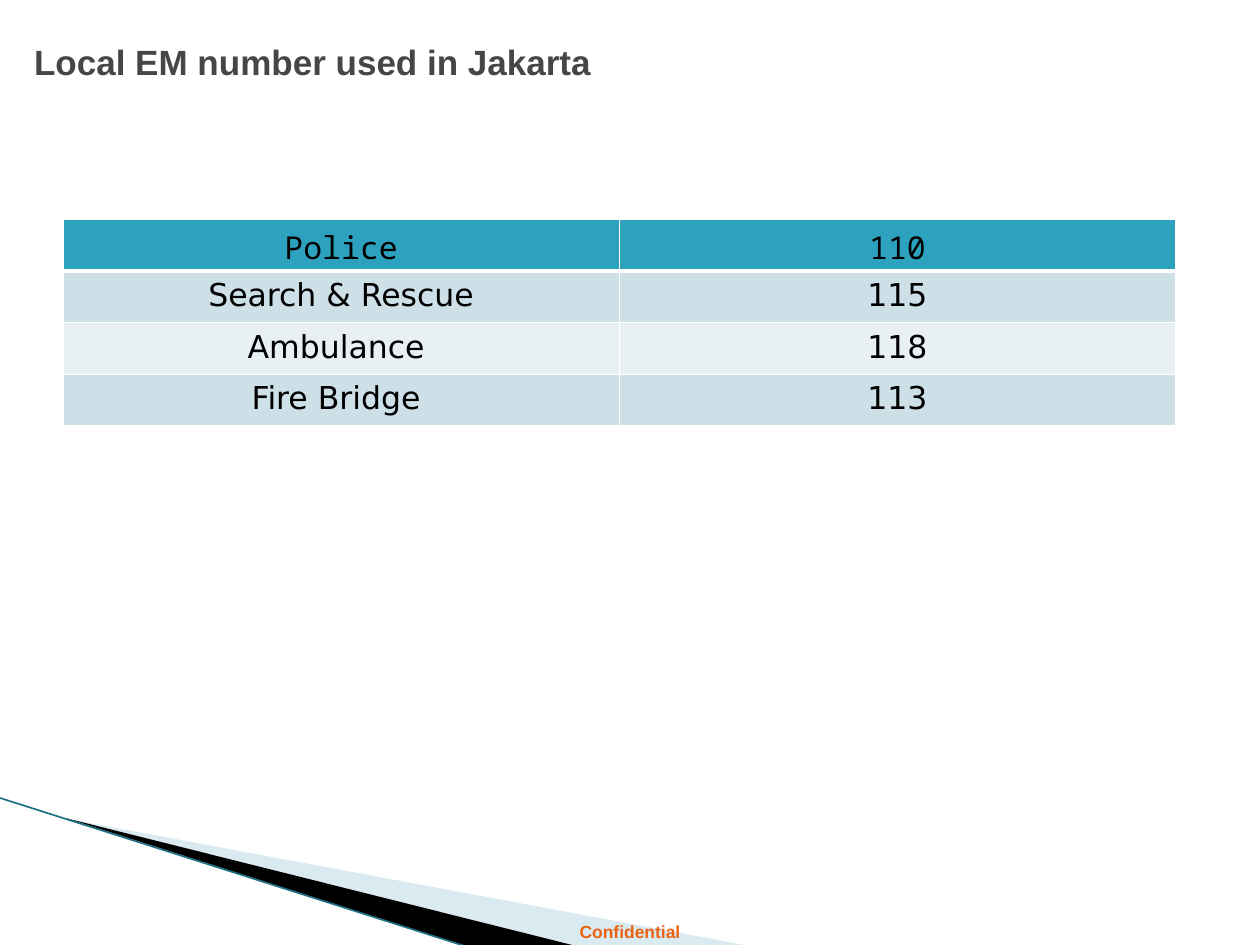
from lxml.etree import SubElement
from pptx import Presentation
from pptx.dml.color import RGBColor
from pptx.enum.shapes import MSO_CONNECTOR
from pptx.enum.text import MSO_ANCHOR, PP_ALIGN
from pptx.oxml import parse_xml
from pptx.oxml.ns import nsdecls, qn
from pptx.util import Inches, Pt

WIDTH, HEIGHT = 10, 7.5
ROW_HEIGHT = 5.48
ROWS = [
    ("Police", "110"),
    ("Search & Rescue", "115"),
    ("Ambulance ", "118"),
    ("Fire Bridge ", "113"),
]


def across(percent):
    return Inches(WIDTH * percent / 100)


def down(percent):
    return Inches(HEIGHT * percent / 100)


def color(value):
    return RGBColor.from_string(value)


def set_attributes(target, values):
    for name, value in values.items():
        setattr(target, name, value)


def write_text(text_frame, text, alignment, font_color, **font_values):
    paragraph = text_frame.paragraphs[0]
    paragraph.text = text
    paragraph.alignment = alignment
    for run in paragraph.runs:
        set_attributes(run.font, font_values)
        run.font.color.rgb = color(font_color)


def add_title(slide, text):
    title = slide.shapes.title
    set_attributes(title, {
        "left": across(1.7), "top": down(2.27),
        "width": across(90), "height": down(26.67),
    })
    set_attributes(title.text_frame, {
        "word_wrap": True, "vertical_anchor": MSO_ANCHOR.TOP, "margin_top": Inches(0.15),
    })
    write_text(title.text_frame, text, PP_ALIGN.LEFT, "464646",
               name="Arial", size=Pt(20), bold=True)


def add_wedge(slide, points, fill_color, opacity=100):
    corners = [(across(x), down(y)) for x, y in points]
    builder = slide.shapes.build_freeform(*corners[0], scale=1.0)
    builder.add_line_segments(corners[1:], close=True)
    shape = builder.convert_to_shape()
    shape.shadow.inherit = False
    shape.fill.solid()
    shape.fill.fore_color.rgb = color(fill_color)
    shape.line.fill.background()
    if opacity < 100:
        fill = shape.element.spPr.find(qn("a:solidFill"))
        SubElement(fill[0], qn("a:alpha"), val=str(opacity * 1000))


def add_edge(slide, start, end, line_color):
    connector = slide.shapes.add_connector(
        MSO_CONNECTOR.STRAIGHT,
        across(start[0]), down(start[1]), across(end[0]), down(end[1]))
    connector.line.color.rgb = color(line_color)
    connector.line.width = Pt(0.95)
    SubElement(connector.element.spPr, qn("a:effectLst"))


def add_footer(slide, text):
    box = slide.shapes.add_textbox(0, down(96.8), across(100), down(3.6))
    box.text_frame.word_wrap = True
    write_text(box.text_frame, text, PP_ALIGN.CENTER, "EB6312",
               name="Arial", size=Pt(10), bold=True)


def set_borders(cell, widths):
    properties = cell._tc.get_or_add_tcPr()
    for index, (side, width) in enumerate(widths.items()):
        properties.insert(index, parse_xml(
            f'<a:ln{side} {nsdecls("a")} w="{Pt(width)}"><a:solidFill>'
            f'<a:srgbClr val="FFFFFF"/></a:solidFill></a:ln{side}>'))


def add_number_table(slide, rows):
    table = slide.shapes.add_table(
        len(rows), 2, across(5), down(23.2),
        across(88.3), down(ROW_HEIGHT * len(rows))).table
    for row_index, row in enumerate(rows):
        header = row_index == 0
        fill_color = "2DA2BF" if header else ("E8F0F4", "CDE0E8")[row_index % 2]
        top = 3 if row_index == 1 else 1
        bottom = 3 if header else 1
        for column_index, text in enumerate(row):
            cell = table.cell(row_index, column_index)
            cell.fill.solid()
            cell.fill.fore_color.rgb = color(fill_color)
            set_borders(cell, {"L": 1, "R": 1, "T": top, "B": bottom})
            write_text(cell.text_frame, text, PP_ALIGN.CENTER, "000000",
                       name="Noto Sans Mono" if header else "DejaVu Sans",
                       size=Pt(18), bold=False)


def main():
    presentation = Presentation()
    set_attributes(presentation, {
        "slide_width": Inches(WIDTH), "slide_height": Inches(HEIGHT),
    })
    slide = presentation.slides.add_slide(presentation.slide_layouts[5])
    add_wedge(slide, [(5.5, 86.7), (59.5, 100.1), (45.6, 100.1)], "A0CBDC", 40)
    add_wedge(slide, [(5.3, 86.6), (45.7, 100.1), (37.2, 100.2)], "000000")
    add_edge(slide, (-0.1, 84.4), (37.1, 100.2), "1F6F85")
    add_footer(slide, "Confidential")
    add_title(slide, "Local EM number used in Jakarta")
    add_number_table(slide, ROWS)
    presentation.save("out.pptx")


if __name__ == "__main__":
    main()
